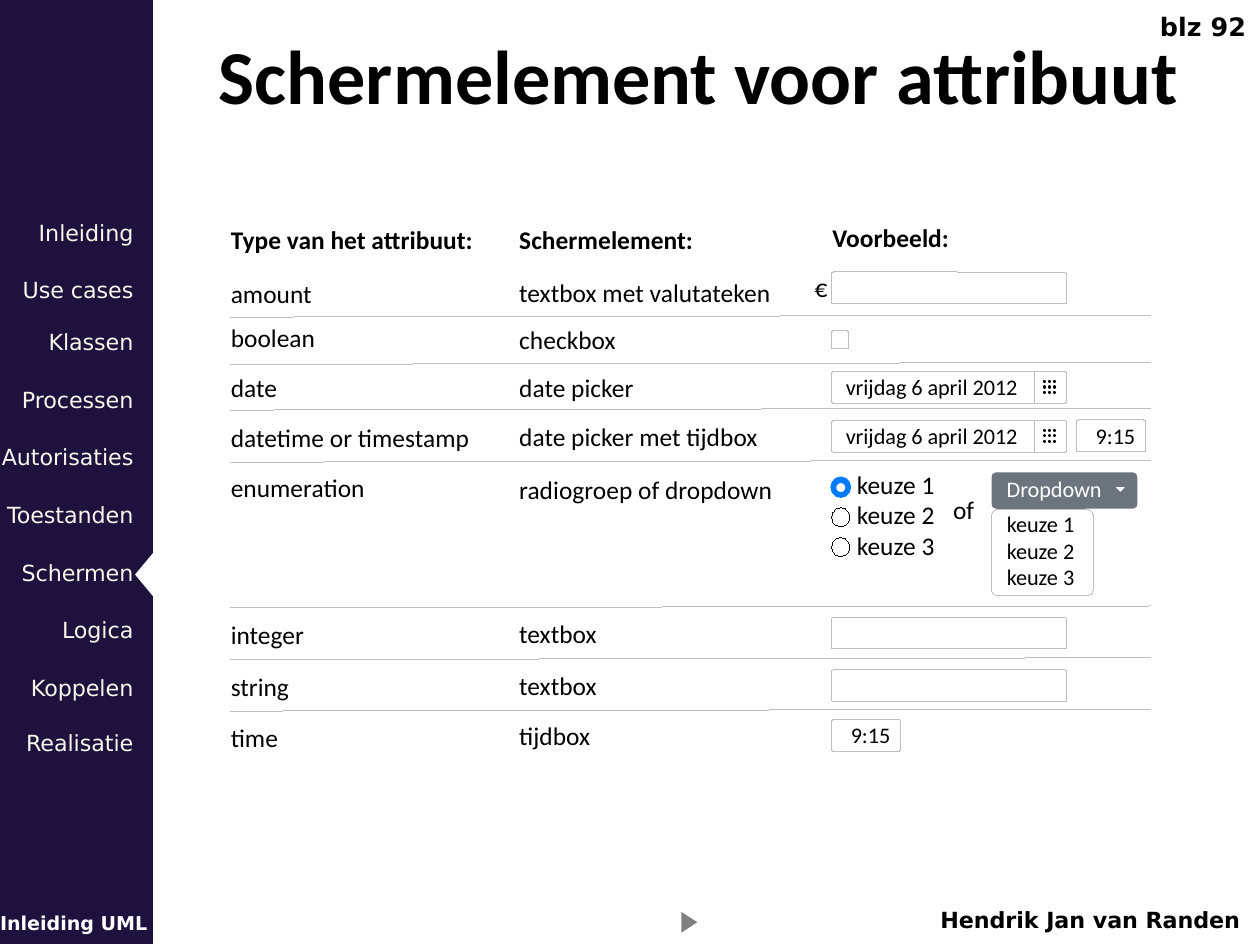
from lxml import etree
from pptx import Presentation
from pptx.dml.color import RGBColor
from pptx.enum.shapes import MSO_CONNECTOR, MSO_SHAPE
from pptx.enum.text import MSO_ANCHOR, PP_ALIGN
from pptx.oxml.ns import qn
from pptx.util import Pt

RECTANGLE, ROUNDED = MSO_SHAPE.RECTANGLE, MSO_SHAPE.ROUNDED_RECTANGLE
OVAL, TRIANGLE = MSO_SHAPE.OVAL, MSO_SHAPE.ISOSCELES_TRIANGLE
STRAIGHT = MSO_CONNECTOR.STRAIGHT
LEFT, CENTER, RIGHT = PP_ALIGN.LEFT, PP_ALIGN.CENTER, PP_ALIGN.RIGHT
TOP, MIDDLE = MSO_ANCHOR.TOP, MSO_ANCHOR.MIDDLE

COLORS = {
    "sidebar": "1E113E", "menu": "FBF5EA", "white": "FFFFFF", "black": "000000",
    "border": "BFBFBF", "button": "6C757D", "selected": "007BFF", "arrow": "808080",
}
BODY_FONT, FRAME_FONT = "Calibri", "DejaVu Sans"
HAIRLINE = 0.01
COLUMN_WIDTH = 88
FIELD_WIDTH, FIELD_HEIGHT, TIME_WIDTH = 74, 10, 21.8
CHOICES = ["keuze 1", "keuze 2", "keuze 3"]

MENU = [
    ("Inleiding", 69.1), ("Use cases", 87.1), ("Klassen", 103.4), ("Processen", 121.8),
    ("Autorisaties", 139.7), ("Toestanden", 158), ("Schermen", 176.2),
    ("Logica", 194.2), ("Koppelen", 212.4), ("Realisatie", 229.7),
]
ROWS = [
    ("amount", 86.3, "textbox met valutateken", 85.8),
    ("boolean", 100.2, "checkbox", 100.8),
    ("date", 116, "date picker", 115.9),
    ("datetime or timestamp", 131.7, "date picker met tijdbox", 131.2),
    ("enumeration", 147.4, "radiogroep of dropdown", 148),
    ("integer", 193.7, "textbox", 193.4),
    ("string", 210.1, "textbox", 209.7),
    ("time", 226.1, "tijdbox", 225.5),
]
RULE_TOPS = [99.9, 114.8, 129.2, 145.6, 191.5, 207.8, 224]


def color(name):
    return RGBColor.from_string(COLORS[name])


def write(box, lines, size, ink="black", font=BODY_FONT, bold=False, align=LEFT,
          anchor=TOP, insets=(2.9, 0, 0, 0), wrap=False):
    frame = box.text_frame
    frame.word_wrap = wrap
    frame.vertical_anchor = anchor
    frame.margin_left, frame.margin_top, frame.margin_right, frame.margin_bottom = map(Pt, insets)
    for index, line in enumerate(lines):
        para = frame.add_paragraph() if index else frame.paragraphs[0]
        para.text = line
        para.alignment = align
        para.font.size = Pt(size)
        para.font.name = font
        para.font.bold = bold
        para.font.color.rgb = color(ink)


def add_text(page, left, top, width, height, text, size, **style):
    box = page.shapes.add_textbox(Pt(left), Pt(top), Pt(width), Pt(height))
    write(box, text if isinstance(text, list) else [text], size, **style)


def add_shape(shapes, kind, left, top, width, height, fill,
              border=None, weight=HAIRLINE, corner=None, rotation=0):
    shape = shapes.add_shape(kind, Pt(left), Pt(top), Pt(width), Pt(height))
    shape.shadow.inherit = False
    shape.fill.solid()
    shape.fill.fore_color.rgb = color(fill)
    if border:
        shape.line.color.rgb = color(border)
        shape.line.width = Pt(weight)
    else:
        shape.line.fill.background()
    if corner:
        shape.adjustments[0] = corner
    shape.rotation = rotation
    return shape


def add_rule(page, left, top, right, bottom):
    rule = page.shapes.add_connector(STRAIGHT, Pt(left), Pt(top), Pt(right), Pt(bottom))
    rule.line.color.rgb = color("border")
    rule.line.width = Pt(HAIRLINE)
    etree.SubElement(rule.element.spPr, qn("a:effectLst"))


def add_field(page, left, top, width=FIELD_WIDTH, height=FIELD_HEIGHT, lines=(),
              insets=(4.3, 2.2, 0, 2.4)):
    field = add_shape(page.shapes, ROUNDED, left, top, width, height, "white", "border", corner=0.062)
    if lines:
        write(field, lines, 7, anchor=MIDDLE, insets=insets)


def add_time_box(page, left, top):
    add_field(page, left, top, TIME_WIDTH, lines=["9:15"], insets=(5.9, 2.2, 0, 2.4))


def add_date_picker(page, left, top):
    add_field(page, left, top, lines=["vrijdag 6 april 2012"])
    divider = left + 63.8
    add_rule(page, divider, top, divider, top + FIELD_HEIGHT)
    dots = page.shapes.add_group_shape().shapes
    for row in range(3):
        for column in range(3):
            add_shape(dots, RECTANGLE, divider + 3.1 + 1.6 * column, top + 3 + 1.75 * row,
                      0.3, 0.3, "black", "black", 0.75)


def add_radio_group(page, left, top):
    for index in range(len(CHOICES)):
        fill, border, weight = ("white", "black", HAIRLINE) if index else ("selected", "selected", 0.75)
        add_shape(page.shapes, OVAL, left, top + 2.7 + 9.4 * index, 5.8, 6, fill, border, weight)
    add_shape(page.shapes, OVAL, left + 1.5, top + 4.4, 2.8, 2.8, "white")
    add_text(page, left + 5.1, top, 30, 30, CHOICES, 8)


def add_dropdown(page, left, top):
    button = add_shape(page.shapes, ROUNDED, left, top, 45.9, 11.5, "button", corner=0.136)
    write(button, ["Dropdown"], 7, "white", anchor=MIDDLE, insets=(4.3, 1.4, 0, 2.9))
    add_shape(page.shapes, TRIANGLE, left + 39.1, top + 4.6, 2.9, 1.5, "white", rotation=180)
    add_field(page, left, top + 11.7, 32, 27, CHOICES, (4.3, 1.4, 0, 2.7))


def add_sidebar(page, left, top, width, height):
    add_shape(page.shapes, RECTANGLE, left, top, width, height, "sidebar")
    add_text(page, 0, top + 283, 51.8, 15.1, "Inleiding UML", 6, ink="white", font=FRAME_FONT,
             bold=True, anchor=MIDDLE, insets=(0, 3.6, 0, 3.6))
    for label, label_top in MENU:
        add_text(page, left, top + label_top, 44, 15.1, label, 7, ink="menu", font=FRAME_FONT,
                 align=RIGHT, insets=(0, 0, 0, 0), wrap=True)
    add_shape(page.shapes, TRIANGLE, left + 39.5, top + 177.4, 17.3, 7.2, "white", rotation=270)


def add_frame(page, left, top, width, height):
    add_text(page, left, top + 3.3, width, 40.3, "Schermelement voor attribuut", 24, bold=True,
             align=CENTER, anchor=MIDDLE, insets=(7.2, 3.6, 7.2, 3.6), wrap=True)
    add_text(page, left + width - 39.6, top, 39.6, 17.3, "blz 92", 8, font=FRAME_FONT, bold=True,
             align=RIGHT, insets=(7.2, 3.6, 4.3, 3.6))
    add_text(page, left + width - 147.4, top + height - 15.4, 141.1, 15.1, "Hendrik Jan van Randen", 7,
             font=FRAME_FONT, bold=True, align=RIGHT, anchor=MIDDLE, insets=(0, 3.6, 0, 3.6))
    add_shape(page.shapes, TRIANGLE, left + 170.6, top + height - 9.4, 6.5, 5, "arrow", rotation=90)


def add_overview(page, left, top, width):
    element_left, example_left = left + 90.8, left + 192
    for label, label_left, label_top in [
        ("Type van het attribuut:", left, 70.6),
        ("Schermelement:", element_left, 70.6),
        ("Voorbeeld:", left + 189.4, 69.9),
    ]:
        add_text(page, label_left, top + label_top, COLUMN_WIDTH, 12.6, label, 8, bold=True)
    for kind, kind_top, element, element_top in ROWS:
        add_text(page, left, top + kind_top, COLUMN_WIDTH, 12.2, kind, 8, insets=(2.9, 1.4, 0, 0))
        add_text(page, element_left, top + element_top, COLUMN_WIDTH, 13, element, 8,
                 insets=(2.9, 1.4, 0, 0))
    for rule_top in RULE_TOPS:
        add_rule(page, left + 2.9, top + rule_top, left + width, top + rule_top - 0.6)
    add_text(page, left + 182.2, top + 85.7, 8.6, 13, "€", 8, align=RIGHT)
    for field_top in (85.7, 194.4, 211):
        add_field(page, example_left, top + field_top)
    add_field(page, example_left, top + 104.3, 5.5, 5.5)
    for picker_top in (117, 132.4):
        add_date_picker(page, example_left, top + picker_top)
    add_time_box(page, example_left + 77.1, top + 132.3)
    add_time_box(page, example_left, top + 226.6)
    add_radio_group(page, example_left, top + 147.8)
    separator = add_shape(page.shapes, RECTANGLE, left + 227.4, top + 155.7, 12.2, 13, "white")
    write(separator, ["of"], 8)
    add_dropdown(page, left + 242.4, top + 148.8)


def main():
    deck = Presentation()
    deck.slide_width, deck.slide_height = Pt(396.72), Pt(297.36)
    page = deck.slides.add_slide(deck.slide_layouts[6])
    add_sidebar(page, -2, 0, 50.2, 298.8)
    add_frame(page, 43.2, 0, 353.5, 297.4)
    add_overview(page, 69.8, 0, 292.4)
    deck.save("out.pptx")


if __name__ == "__main__":
    main()
